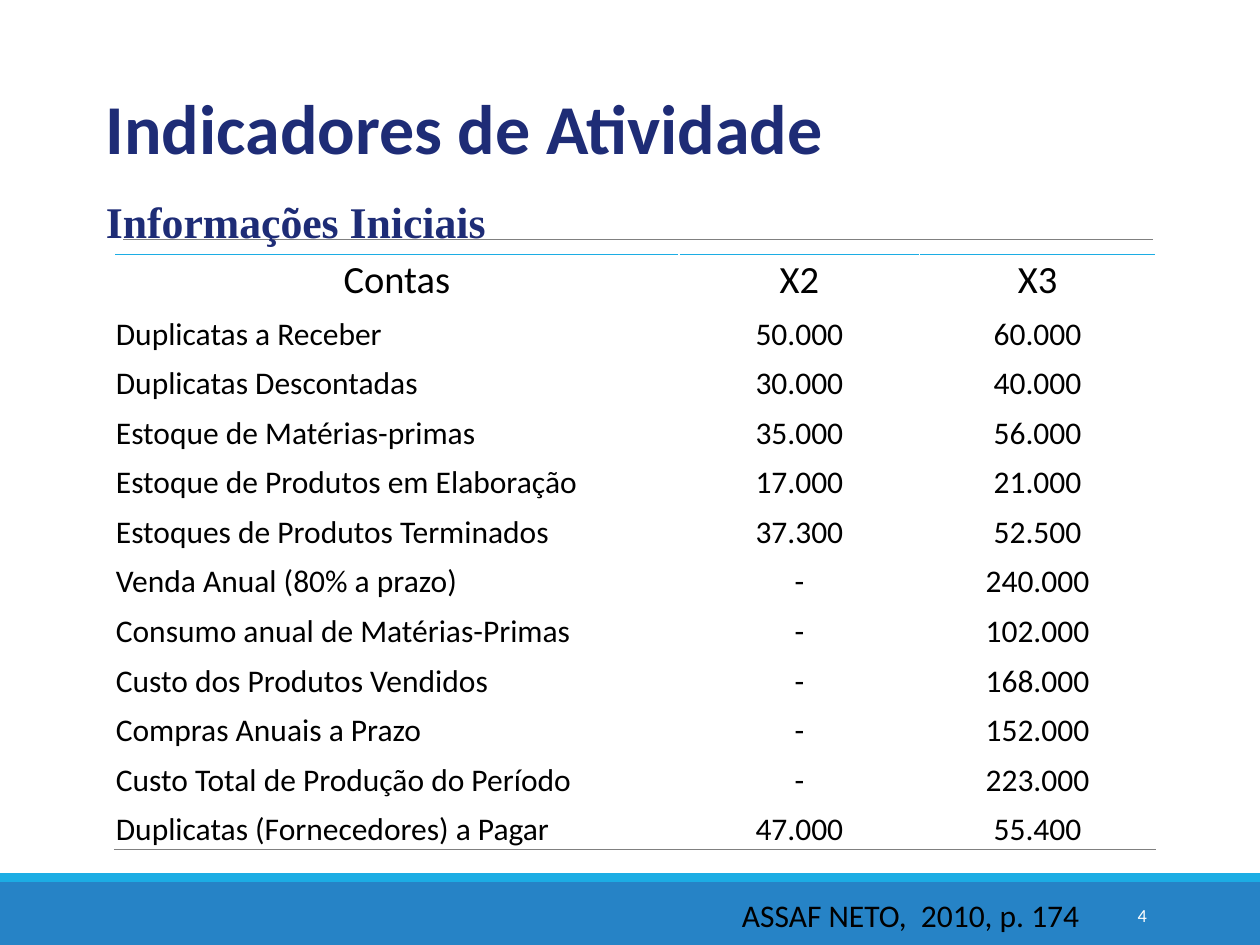
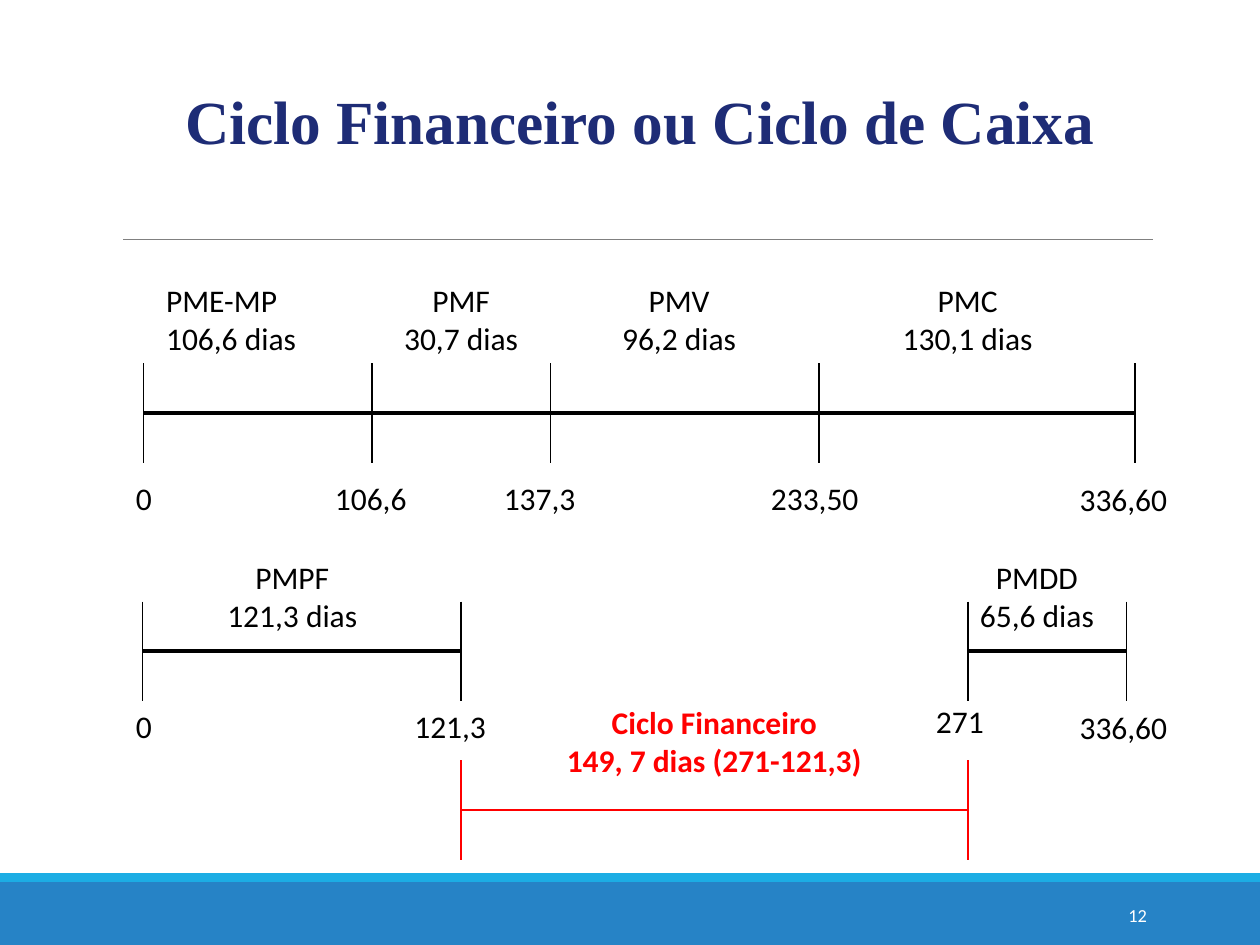
from lxml.etree import SubElement
from pptx import Presentation
from pptx.dml.color import RGBColor as RGB
from pptx.enum.shapes import MSO_CONNECTOR as Link, MSO_SHAPE as Form
from pptx.enum.text import MSO_ANCHOR as Anchor, MSO_AUTO_SIZE as Fit, PP_ALIGN as Align
from pptx.oxml import parse_xml
from pptx.oxml.ns import nsdecls, qn
from pptx.util import Inches, Pt

HUES = {
    "navy": "1E2C76", "blue": "2683C6", "cyan": "1CADE4", "gray": "808080",
    "black": "000000", "white": "FFFFFF", "red": "FF0000",
}
SANS, SERIF = "Calibri", "Times New Roman"
COLS, ROWS = 100, 75
TICK = 7.9

ACCOUNTS = [
    ("Contas", "X2", "X3"),
    ("Duplicatas a Receber", "50.000", "60.000"),
    ("Duplicatas Descontadas", "30.000", "40.000"),
    ("Estoque de Matérias-primas", "35.000", "56.000"),
    ("Estoque de Produtos em Elaboração", "17.000", "21.000"),
    ("Estoques de Produtos Terminados", "37.300", "52.500"),
    ("Venda Anual (80% a prazo)", "-", "240.000"),
    ("Consumo anual de Matérias-Primas", "-", "102.000"),
    ("Custo dos Produtos Vendidos", "-", "168.000"),
    ("Compras Anuais a Prazo", "-", "152.000"),
    ("Custo Total de Produção do Período", "-", "223.000"),
    ("Duplicatas (Fornecedores) a Pagar", "47.000", "55.400"),
]

SPANS = [
    (32.8, (11.4, 29.5, 43.7, 65, 90.1), "black", 2.25),
    (51.7, (11.3, 36.6), "black", 2.25),
    (51.7, (76.8, 89.4), "black", 2.25),
    (64.3, (36.6, 76.8), "red", 1),
]

TERMS = [
    (12.2, 21.8, "PME-MP", "106,6 dias", Align.LEFT),
    (30.3, 21.8, "PMF", "30,7 dias", Align.CENTER),
    (47.6, 21.8, "PMV", "96,2 dias", Align.CENTER),
    (70.5, 21.8, "PMC", "130,1 dias", Align.CENTER),
    (16.9, 43.8, "PMPF", "121,3 dias", Align.CENTER),
    (76, 43.8, "PMDD", "65,6 dias", Align.CENTER),
]

DAYS = [
    (9.8, 37.5, 3.9, "0"), (25.6, 37.5, 11, "106,6"), (39, 37.5, 9.4, "137,3"),
    (60.2, 37.5, 9.4, "233,50"), (84.7, 37.6, 9.4, "336,60"),
    (9.8, 55.6, 3.9, "0"), (31.9, 55.6, 8.7, "121,3"),
    (73.3, 55.2, 7, "271"), (84.7, 55.7, 9.4, "336,60"),
]


def grid(*cells):
    return [Inches(cell * 10 / COLS) for cell in cells]


def hue(name):
    return RGB.from_string(HUES[name])


def add_run(para, text, size, color="black", face=SANS, bold=False):
    run = para.add_run()
    run.text = text
    font = run.font
    font.size, font.name, font.bold = Pt(size), face, bold
    font.color.rgb = hue(color)


def add_text(slide, box, lines, size=18, color="black", bold=False,
             align=Align.LEFT, anchor=Anchor.TOP):
    frame = slide.shapes.add_textbox(*grid(*box)).text_frame
    frame.word_wrap = True
    frame.vertical_anchor = anchor
    for i, line in enumerate(lines):
        para = frame.add_paragraph() if i else frame.paragraphs[0]
        para.alignment = align
        add_run(para, line, size, color, bold=bold)


def add_line(slide, start, end, color, width):
    line = slide.shapes.add_connector(Link.STRAIGHT, *grid(*start, *end))
    line.line.color.rgb = hue(color)
    line.line.width = Pt(width)
    SubElement(line.element.spPr, qn("a:effectLst"))


def add_band(slide, top, height, color):
    band = slide.shapes.add_shape(Form.RECTANGLE, *grid(0, top, COLS, height))
    band.shadow.inherit = False
    band.fill.solid()
    band.fill.fore_color.rgb = hue(color)
    band.line.fill.background()


def add_title(slide, box, lines, align=Align.LEFT):
    title = slide.shapes.title
    title.left, title.top, title.width, title.height = grid(*box)
    title.element.getparent().append(title.element)
    frame = title.text_frame
    frame.word_wrap = True
    frame.auto_size = Fit.NONE
    frame.vertical_anchor = Anchor.TOP
    for i, (text, size, face) in enumerate(lines):
        para = frame.add_paragraph() if i else frame.paragraphs[0]
        para.alignment, para.line_spacing = align, 1.5
        add_run(para, text, size, "navy", face, True)


def add_page(deck, number):
    slide = deck.slides.add_slide(deck.slide_layouts[5])
    add_band(slide, 70, ROWS - 70, "blue")
    add_band(slide, 69.3, 0.7, "cyan")
    add_line(slide, (9.8, 19), (91.5, 19), "gray", 0.5)
    add_text(slide, (81.2, 70.6, 10.8, 4), [number], 10.5, "white",
             align=Align.RIGHT, anchor=Anchor.MIDDLE)
    return slide


def add_edge(cell, side, color, width):
    edge = parse_xml(
        f'<a:{side} {nsdecls("a")} w="{Pt(width)}"><a:solidFill>'
        f'<a:srgbClr val="{HUES[color]}"/></a:solidFill></a:{side}>')
    cell._tc.get_or_add_tcPr().insert(0, edge)


def add_grid(slide, box, widths, rows):
    table = slide.shapes.add_table(len(rows), len(widths), *grid(*box)).table
    table.first_row = table.horz_banding = False
    for col, width in zip(table.columns, grid(*widths)):
        col.width = width
    for i, row in enumerate(rows):
        for j, text in enumerate(row):
            cell = table.cell(i, j)
            cell.fill.background()
            cell.vertical_anchor = Anchor.BOTTOM
            cell.margin_left = cell.margin_right = cell.margin_top = Inches(0.01)
            cell.margin_bottom = 0
            para = cell.text_frame.paragraphs[0]
            para.alignment = Align.LEFT if i and not j else Align.CENTER
            add_run(para, text, 18 if i else 22)
            if i == 0:
                add_edge(cell, "lnT", "cyan", 1)
            elif i == len(rows) - 1:
                add_edge(cell, "lnB", "gray", 0.5)


def add_span(slide, row, ticks, color, width):
    add_line(slide, (ticks[0], row), (ticks[-1], row), color, width)
    for tick in ticks:
        add_line(slide, (tick, row - TICK / 2), (tick, row + TICK / 2), color, 1)


def add_accounts(deck):
    slide = add_page(deck, "4")
    add_title(slide, (7.4, 2.9, 89.7, 47.7), [
        ("Indicadores de Atividade", 40, SANS),
        ("Informações Iniciais", 25, SERIF)])
    add_grid(slide, (9.1, 20.2, 82.6, 47.2), (44.8, 19.1, 18.7), ACCOUNTS)
    add_text(slide, (57.9, 70.6, 31.5, 4), ["ASSAF NETO,  2010, p. 174"])


def add_cycle(deck):
    slide = add_page(deck, "12")
    add_title(slide, (7.5, 3.2, 86.6, 19.9),
              [("Ciclo Financeiro ou Ciclo de Caixa", 35, SERIF)], Align.CENTER)
    for span in SPANS:
        add_span(slide, *span)
    for left, top, term, days, align in TERMS:
        add_text(slide, (left, top, 12.6, 7.1), [term, days], align=align)
    for left, top, width, day in DAYS:
        add_text(slide, (left, top, width, 4), [day])
    add_text(slide, (42.9, 55.3, 27.6, 7.1),
             ["Ciclo Financeiro", "149, 7 dias (271-121,3)"],
             color="red", bold=True, align=Align.CENTER)


def main():
    deck = Presentation()
    deck.slide_width, deck.slide_height = grid(COLS, ROWS)
    add_accounts(deck)
    add_cycle(deck)
    deck.save("out.pptx")


if __name__ == "__main__":
    main()
